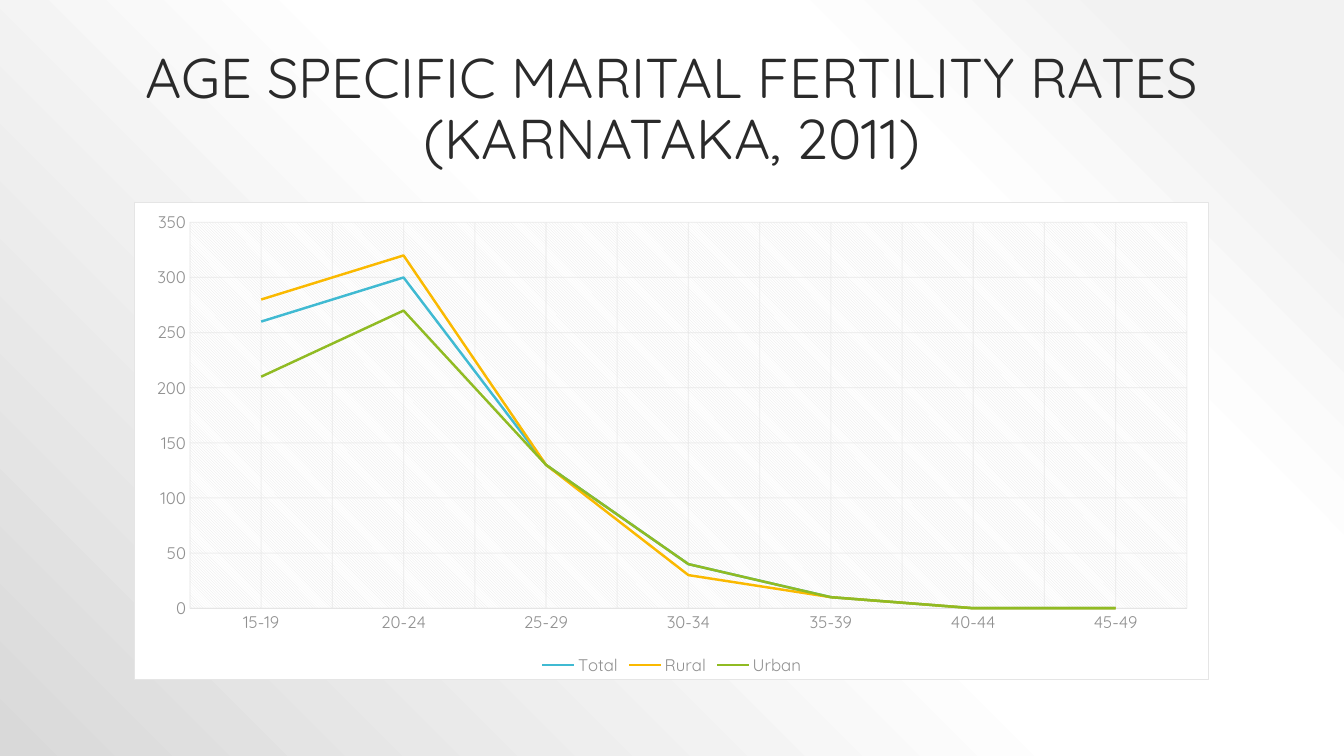
from lxml import etree
from pptx import Presentation
from pptx.chart.data import CategoryChartData
from pptx.dml.color import RGBColor
from pptx.enum.chart import XL_CHART_TYPE, XL_LEGEND_POSITION, XL_TICK_MARK
from pptx.enum.text import MSO_ANCHOR, MSO_AUTO_SIZE, PP_ALIGN
from pptx.oxml.ns import qn
from pptx.util import Cm, Pt

FONT = "Quicksand"
TITLE_INK = RGBColor(0x2A, 0x2A, 0x2A)
CHART_INK = RGBColor(0x54, 0x54, 0x54)
LABEL_GREY = RGBColor(0x90, 0x90, 0x90)
RULE_GREY = RGBColor(0xE5, 0xE5, 0xE5)
WHITE = RGBColor(0xFF, 0xFF, 0xFF)
TOTAL_BLUE = RGBColor(0x40, 0xBA, 0xD2)
RURAL_AMBER = RGBColor(0xFA, 0xB9, 0x00)
URBAN_GREEN = RGBColor(0x90, 0xBB, 0x23)
BACKDROP_STOPS = [
    (10, RGBColor(0xF2, 0xF2, 0xF2)),
    (28, WHITE),
    (48, WHITE),
    (100, RGBColor(0xD9, 0xD9, 0xD9)),
]
NAMESPACES = (
    'xmlns:a="http://schemas.openxmlformats.org/drawingml/2006/main" '
    'xmlns:c="http://schemas.openxmlformats.org/drawingml/2006/chart"'
)


def xml_part(tag, content):
    return etree.fromstring(f"<{tag} {NAMESPACES}>{content}</{tag}>")


def style_font(font, size, color):
    for name, value in {"name": FONT, "size": Pt(size), "bold": False}.items():
        setattr(font, name, value)
    font.color.rgb = color


prs = Presentation()
prs.slide_width, prs.slide_height = Cm(33.87), Cm(19.05)
slide = prs.slides.add_slide(prs.slide_layouts[5])

# Background: radial gradient from the top right corner
slide.background.fill.solid()
stops = "".join(
    f'<a:gs pos="{pos * 1000}"><a:srgbClr val="{color}"/></a:gs>'
    for pos, color in BACKDROP_STOPS
)
backdrop = xml_part(
    "a:gradFill",
    f'<a:gsLst>{stops}</a:gsLst><a:path path="circle">'
    '<a:fillToRect l="100000" b="100000"/></a:path>',
)
plain_fill = next(slide.element.iter(qn("a:solidFill")))
plain_fill.getparent().replace(plain_fill, backdrop)

# Title
title = slide.shapes.title
title.left, title.top, title.width, title.height = Cm(3.38), Cm(0.76), Cm(27.1), Cm(3.68)
frame = title.text_frame
for name, value in {
    "text": "AGE SPECIFIC MARITAL FERTILITY RATES (KARNATAKA, 2011)",
    "word_wrap": True,
    "auto_size": MSO_AUTO_SIZE.NONE,
    "vertical_anchor": MSO_ANCHOR.BOTTOM,
}.items():
    setattr(frame, name, value)
heading = frame.paragraphs[0]
heading.alignment = PP_ALIGN.CENTER
heading.line_spacing = 0.9
style_font(heading.runs[0].font, 40, TITLE_INK)

# Fertility rates by age group
rates = {
    "Total": ([260, 300, 130, 40, 10, 0, 0], TOTAL_BLUE),
    "Rural": ([280, 320, 130, 30, 10, 0, 0], RURAL_AMBER),
    "Urban": ([210, 270, 130, 40, 10, 0, 0], URBAN_GREEN),
}
chart_data = CategoryChartData()
chart_data.categories = [f"{age}-{age + 4}" for age in range(15, 50, 5)]
for area, (values, _) in rates.items():
    chart_data.add_series(area, values)
chart = slide.shapes.add_chart(
    XL_CHART_TYPE.LINE, Cm(3.38), Cm(5.08), Cm(27.1), Cm(12.06), chart_data
).chart
chart.has_title = False
style_font(chart.font, 10, CHART_INK)

for series, (_, color) in zip(chart.plots[0].series, rates.values()):
    series.smooth = False
    series.format.line.color.rgb = color
    series.format.line.width = Pt(1.75)

# Axes and gridlines
ages, rate_scale = chart.category_axis, chart.value_axis
for axis in (ages, rate_scale):
    axis.major_tick_mark = axis.minor_tick_mark = XL_TICK_MARK.NONE
    axis.has_major_gridlines = True
    style_font(axis.tick_labels.font, 12, LABEL_GREY)
ages.has_minor_gridlines = True
ages.format.line.color.rgb = RULE_GREY
ages.format.line.width = Pt(0.75)
rate_scale.format.line.fill.background()
rate_scale.minimum_scale, rate_scale.maximum_scale, rate_scale.major_unit = 0, 350, 50

grid_line = (
    f'<a:ln w="9525"><a:solidFill><a:srgbClr val="{RULE_GREY}">'
    '<a:alpha val="54000"/></a:srgbClr></a:solidFill></a:ln>'
)
for tag in ("c:majorGridlines", "c:minorGridlines"):
    for gridlines in chart.element.iter(qn(tag)):
        gridlines.append(xml_part("c:spPr", grid_line))

# Legend
chart.has_legend = True
chart.legend.position = XL_LEGEND_POSITION.BOTTOM
chart.legend.include_in_layout = False
style_font(chart.legend.font, 12, LABEL_GREY)

# White chart area with a thin border
chart.element.find(qn("c:chart")).addnext(xml_part(
    "c:spPr",
    f'<a:solidFill><a:srgbClr val="{WHITE}"/></a:solidFill>'
    f'<a:ln w="9525"><a:solidFill><a:srgbClr val="{RULE_GREY}"/></a:solidFill></a:ln>',
))

# Hatched plot area with a fixed place, in hundredths of the chart
plot_area = next(chart.element.iter(qn("c:plotArea")))
for layout in plot_area.findall(qn("c:layout")):
    plot_area.remove(layout)
place = "".join(
    f'<c:{side} val="{share / 100}"/>'
    for side, share in {"x": 5.15, "y": 4.25, "w": 92.8, "h": 80.8}.items()
)
plot_area.insert(0, xml_part(
    "c:layout",
    '<c:manualLayout><c:layoutTarget val="inner"/><c:xMode val="edge"/>'
    f'<c:yMode val="edge"/>{place}</c:manualLayout>',
))
plot_area.append(xml_part(
    "c:spPr",
    f'<a:pattFill prst="ltDnDiag"><a:fgClr><a:srgbClr val="{RULE_GREY}"/></a:fgClr>'
    f'<a:bgClr><a:srgbClr val="{WHITE}"/></a:bgClr></a:pattFill><a:ln><a:noFill/></a:ln>',
))

prs.save("out.pptx")
